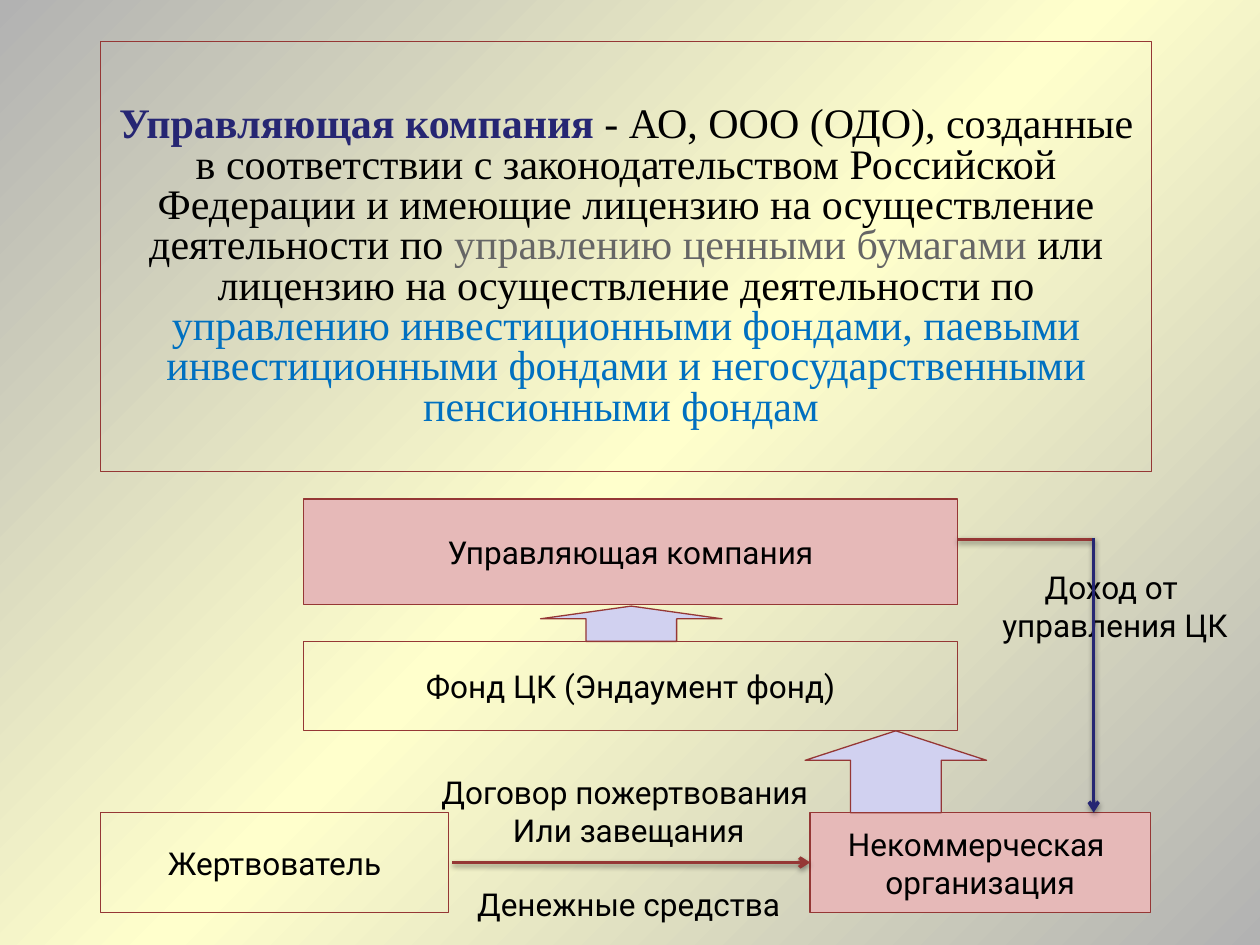
from lxml.etree import SubElement
from pptx import Presentation
from pptx.dml.color import RGBColor
from pptx.enum.shapes import MSO_CONNECTOR, MSO_SHAPE
from pptx.enum.text import MSO_ANCHOR, PP_ALIGN
from pptx.oxml.ns import qn
from pptx.util import Inches, Pt

COLUMN = Inches(10) // 100
ROW = Inches(7.5) // 75

BLACK = RGBColor(0x00, 0x00, 0x00)
GREY = RGBColor(0xB2, 0xB2, 0xB2)
CREAM = RGBColor(0xFF, 0xFF, 0xCC)
MAROON = RGBColor(0x95, 0x37, 0x35)
PINK = RGBColor(0xE6, 0xB9, 0xB8)
LILAC = RGBColor(0xD1, 0xD1, 0xF0)
NAVY = RGBColor(0x26, 0x26, 0x73)
DIM = RGBColor(0x66, 0x66, 0x66)
BLUE = RGBColor(0x00, 0x70, 0xC0)

LABEL_FONT = {"name": "Roboto", "size": Pt(18)}
DEFINITION_FONT = {"name": "Times New Roman", "size": Pt(24)}

DEFINITION = [
    ("Управляющая компания ", NAVY, True),
    ("- АО, ООО (ОДО), созданные в соответствии с законодательством Российской "
     "Федерации и имеющие лицензию на осуществление деятельности по ", BLACK, False),
    ("управлению ценными бумагами ", DIM, False),
    ("или лицензию на осуществление деятельности по ", BLACK, False),
    ("управлению инвестиционными фондами, паевыми инвестиционными фондами "
     "и негосударственными пенсионными фондам ", BLUE, False),
]


def apply(target, values):
    for name, value in values.items():
        setattr(target, name, value)


def place(region, part):
    left, top = region[:2]
    x, y, *size = part
    cells = [left + x, top + y, *size]
    return [round(cell * unit) for cell, unit in zip(cells, (COLUMN, ROW) * 2)]


def add_run(paragraph, text, font, color, bold=False):
    run = paragraph.add_run()
    run.text = text
    apply(run.font, {**font, "bold": bold})
    run.font.color.rgb = color


def write_lines(shape, lines):
    frame = shape.text_frame
    apply(frame, {"word_wrap": False, "vertical_anchor": MSO_ANCHOR.MIDDLE})
    for index, line in enumerate(lines):
        paragraph = frame.add_paragraph() if index else frame.paragraphs[0]
        paragraph.alignment = PP_ALIGN.CENTER
        add_run(paragraph, line, LABEL_FONT, BLACK)
    return frame


def add_outlined(slide, kind, position, fill=None):
    shape = slide.shapes.add_shape(kind, *position)
    shape.shadow.inherit = False
    if fill is None:
        shape.fill.background()
    else:
        shape.fill.solid()
        shape.fill.fore_color.rgb = fill
    shape.line.color.rgb = MAROON
    shape.line.width = Pt(0.75)
    return shape


def paint_background(slide):
    fill = slide.background.fill
    fill.gradient()
    fill.gradient_angle = 315
    stops = slide.element.find(".//" + qn("a:gsLst"))
    for stop in list(stops):
        stops.remove(stop)
    for share, color in ((0, GREY), (50, CREAM), (100, GREY)):
        stop = SubElement(stops, qn("a:gs"), pos=str(share * 1000))
        SubElement(stop, qn("a:srgbClr"), val=str(color))


def add_definition(slide, region):
    panel = add_outlined(slide, MSO_SHAPE.RECTANGLE, place(region, (0, 0, *region[2:])))
    frame = panel.text_frame
    apply(frame, {"word_wrap": True, "vertical_anchor": MSO_ANCHOR.TOP,
                  "margin_top": round(5.15 * ROW)})
    paragraph = frame.paragraphs[0]
    apply(paragraph, {"alignment": PP_ALIGN.CENTER, "line_spacing": 0.8})
    for text, color, bold in DEFINITION:
        add_run(paragraph, text, DEFINITION_FONT, color, bold)


def add_participants(slide, region):
    participants = [
        ((0, 24.9, 27.6, 7.9), None, ["Жертвователь"]),
        ((16.1, 11.3, 51.9, 7.1), None, ["Фонд ЦК (Эндаумент фонд)"]),
        ((16.1, 0, 51.9, 8.4), PINK, ["Управляющая компания"]),
        ((56.3, 24.9, 27, 7.9), PINK, ["Некоммерческая ", "организация"]),
    ]
    for part, fill, lines in participants:
        participant = add_outlined(slide, MSO_SHAPE.RECTANGLE, place(region, part), fill)
        write_lines(participant, lines)
    return participant


def add_transfers(slide, region):
    for part in ((55.9, 18.4, 14.4, 6.5), (34.9, 8.5, 14.4, 2.8)):
        transfer = add_outlined(slide, MSO_SHAPE.DOWN_ARROW, place(region, part), LILAC)
        transfer.rotation = 180
        transfer.adjustments[0] = 0.5
        transfer.adjustments[1] = 0.36


def add_link(slide, region, start, end, color, arrow):
    link = slide.shapes.add_connector(
        MSO_CONNECTOR.STRAIGHT, *place(region, start), *place(region, end))
    link.line.color.rgb = color
    link.line.width = Pt(2)
    if arrow:
        SubElement(link.line._get_or_add_ln(), qn("a:tailEnd"), type="arrow")
    effects = SubElement(link._element.spPr, qn("a:effectLst"))
    shadow = SubElement(effects, qn("a:outerShdw"), blurRad=str(Pt(3.1)),
                        dist=str(Pt(1.6)), dir="5400000", rotWithShape="0")
    shade = SubElement(shadow, qn("a:srgbClr"), val=str(BLACK))
    SubElement(shade, qn("a:alpha"), val="38000")
    return link


def add_flows(slide, region, recipient):
    donation = add_link(slide, region, (27.9, 28.85), (56.3, 28.85), MAROON, True)
    donation.end_connect(recipient, 1)
    add_link(slide, region, (68, 3.2), (78.8, 3.2), MAROON, False)
    add_link(slide, region, (78.8, 3.1), (78.8, 24.9), NAVY, True)


def add_captions(slide, region):
    income = slide.shapes.add_textbox(*place(region, (70.4, 3.1, 20.2, 10.8)))
    write_lines(income, ["Доход от ", "управления ЦК"])
    agreement = slide.shapes.add_textbox(*place(region, (24.9, 21.7, 34, 12)))
    frame = write_lines(
        agreement, ["Договор пожертвования ", "Или завещания", "Денежные средства"])
    frame.paragraphs[-1].space_before = Pt(21)


def add_scheme(slide, region):
    recipient = add_participants(slide, region)
    add_transfers(slide, region)
    add_captions(slide, region)
    add_flows(slide, region, recipient)


def main():
    deck = Presentation()
    apply(deck, {"slide_width": 100 * COLUMN, "slide_height": 75 * ROW})
    slide = deck.slides.add_slide(deck.slide_layouts[6])
    paint_background(slide)
    add_scheme(slide, (8, 39.6, 90.6, 32.8))
    add_definition(slide, (8, 3.3, 83.4, 34.1))
    deck.save("out.pptx")


if __name__ == "__main__":
    main()
